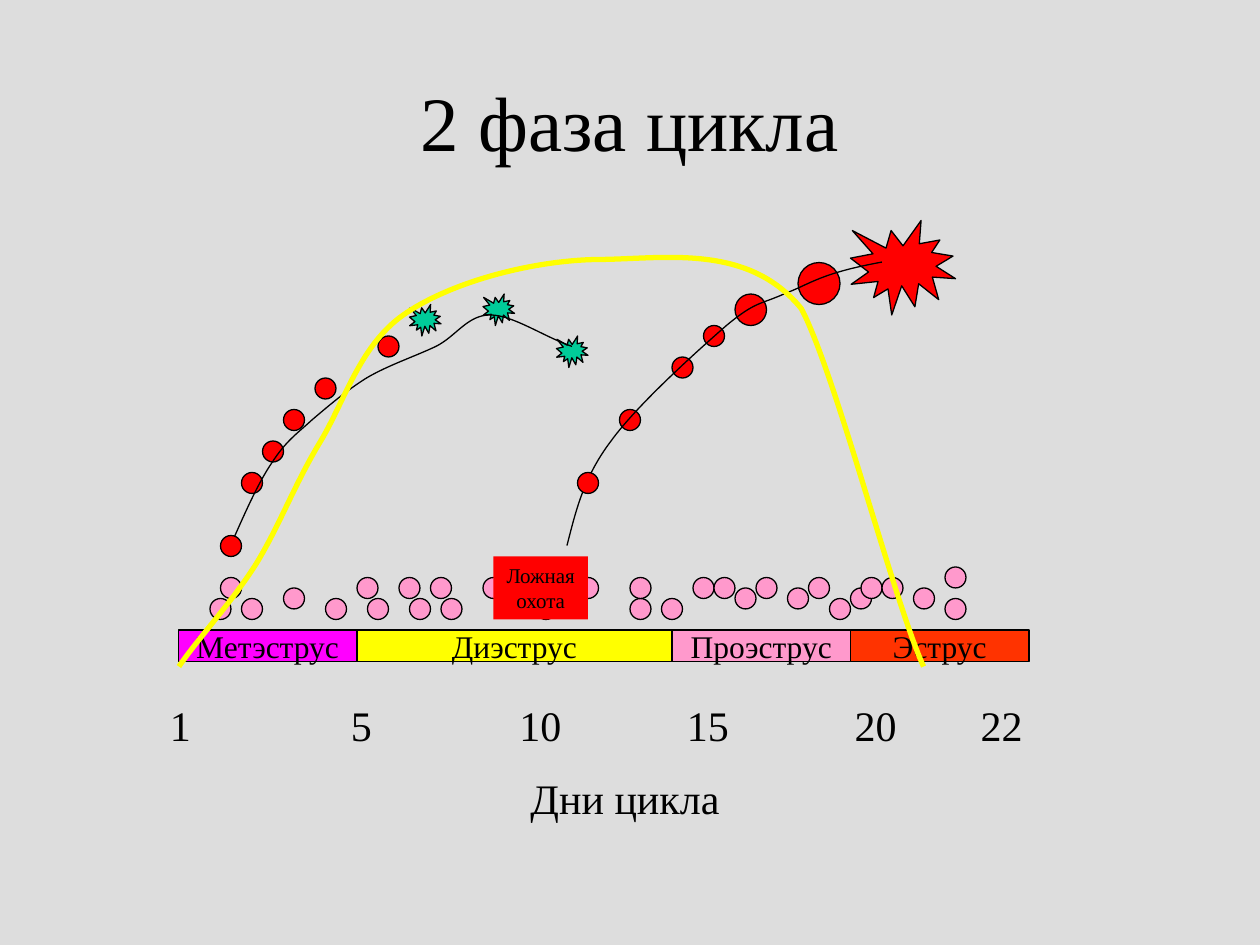
"""Build a slide on the second phase of the cycle, laid on a grid of 1/12 inch."""
from lxml import etree
from pptx import Presentation
from pptx import util as u
from pptx.dml.color import RGBColor
from pptx.enum import shapes, text
from pptx.oxml.ns import qn

UNIT = u.Inches(1 / 12)
FONT = "Times New Roman"
KIND = shapes.MSO_SHAPE
PINK, RED, GREEN, BLACK = "FF99CC", "FF0000", "00CC99", "000000"
TITLE = "2 фаза цикла"
BANDS = [("Метэструс", 17, "FF00FF"), ("Диэструс", 30, "FFFF00"),
         ("Проэструс", 17, PINK), ("Эструс", 17, "FF3300")]
DAYS = [("5", 1.85), ("10", 3.27), ("15", 4.6), ("20", 5.93), ("22", 6.93)]
AXIS = "Дни цикла"
FALSE = ["Ложная", "охота"]
SMALL = {57: [20, 23, 31, 35, 39, 42, 51, 60, 63, 79, 90],
         56: [27, 70, 75, 81, 87],
         55: [21, 34, 38, 41, 46, 55, 60, 66, 68, 72, 77, 82, 84],
         54: [90]}
GROW = [(23, 45, 2), (25, 42, 2), (27, 39, 2), (30, 36, 2), (36, 32, 2),
        (59, 39, 2), (64, 34, 2), (67, 31, 2), (70, 28, 3), (76, 25, 4)]
FIRST = [(21, 51, 2), (55, 45, 2)]
STARS = [(39, 29, 3, 3, GREEN), (46, 28, 3, 3, GREEN),
         (53, 32, 3, 3, GREEN), (81, 21, 10, 9, RED)]
WAVES = [
    [(1.83, 4.33), (1.94, 4.08), (2.05, 3.83), (2.16, 3.67),
     (2.27, 3.5), (2.36, 3.44), (2.48, 3.33), (2.61, 3.22), (2.75, 3.1), (2.91, 3),
     (3.08, 2.9), (3.29, 2.83), (3.46, 2.75), (3.62, 2.67), (3.71, 2.5), (3.89, 2.5),
     (4.07, 2.5), (4.31, 2.67), (4.54, 2.75)],
    [(4.5, 4.33), (4.57, 4.06), (4.63, 3.79), (4.85, 3.5),
     (5.06, 3.21), (5.54, 2.78), (5.77, 2.58), (6, 2.39), (6.03, 2.42), (6.23, 2.33),
     (6.44, 2.25), (6.51, 2.17), (7, 2.08)]]
LEVEL = [(1.42, 5.29), (1.57, 5.07), (1.84, 4.78), (2.03, 4.48),
         (2.21, 4.19), (2.34, 3.84), (2.54, 3.51), (2.74, 3.18), (2.86, 2.72), (3.23, 2.48),
         (3.59, 2.24), (4.21, 2.07), (4.73, 2.06), (5.25, 2.06), (5.93, 1.92), (6.36, 2.45),
         (6.63, 2.96), (7.1, 4.79), (7.33, 5.29)]


def rgb(code):
    return RGBColor.from_string(code)


def write(para, words, size, align=text.PP_ALIGN.CENTER):
    para.alignment = align
    run = para.add_run()
    run.text = words
    run.font.size, run.font.name = u.Pt(size), FONT
    run.font.color.rgb = rgb(BLACK)


def shape(kind, left, top, wide, high, fill, line=True):
    item = slide.shapes.add_shape(kind, *(int(n * UNIT) for n in (left, top, wide, high)))
    item.shadow.inherit = False
    item.fill.solid()
    item.fill.fore_color.rgb = rgb(fill)
    if line:
        item.line.color.rgb, item.line.width = rgb(BLACK), u.Pt(0.75)
    else:
        item.line.fill.background()
    return item


def dots(spots, fill):
    for left, top, size in spots:
        shape(KIND.OVAL, left, top, size, size, fill)


def curve(spots, color, width):
    spots = [(u.Inches(x), u.Inches(y)) for x, y in spots]
    form = slide.shapes.build_freeform(*spots[0])
    form.add_line_segments(spots[1:], close=False)
    item = form.convert_to_shape()
    item.shadow.inherit = False
    item.fill.background()
    item.line.color.rgb, item.line.width = rgb(color), u.Pt(width)
    steps = list(item.element.iter(qn("a:lnTo")))
    for i in range(0, len(steps), 3):
        bend = etree.Element(qn("a:cubicBezTo"))
        steps[i].addprevious(bend)
        for step in steps[i:i + 3]:
            bend.append(step[0])
            step.getparent().remove(step)


def box(left, top, wide, high):
    frame = slide.shapes.add_textbox(*map(u.Inches, (left, top, wide, high))).text_frame
    frame.word_wrap = True
    return frame


deck = Presentation()
deck.slide_width, deck.slide_height = u.Inches(10), u.Inches(7.5)
slide = deck.slides.add_slide(deck.slide_layouts[5])
slide.background.fill.solid()
slide.background.fill.fore_color.rgb = rgb("DDDDDD")

title = slide.shapes.title
title.left, title.top, title.width, title.height = map(u.Inches, (0.75, 0.33, 8.5, 1.25))
title.text_frame.vertical_anchor = text.MSO_ANCHOR.MIDDLE
write(title.text_frame.paragraphs[0], TITLE, 44)

left = 17
for name, wide, fill in BANDS:
    frame = shape(KIND.RECTANGLE, left, 60, wide, 3, fill).text_frame
    frame.word_wrap = False
    write(frame.paragraphs[0], name, 18)
    left += wide

frame = box(0.92, 5.5, 8.08, 1.11)
days = frame.paragraphs[0]
write(days, "".join("\t" + day for day, _ in DAYS), 24, text.PP_ALIGN.LEFT)
tabs = etree.SubElement(days._p.get_or_add_pPr(), qn("a:tabLst"))
for _, stop in DAYS:
    etree.SubElement(tabs, qn("a:tab"), pos=str(u.Inches(stop)), algn="ctr")
axis = frame.add_paragraph()
axis.space_before = u.Pt(13)
write(axis, AXIS, 24)

dots([(x, y, 2) for y, row in SMALL.items() for x in row], PINK)
dots(GROW, RED)
for star in STARS:
    shape(KIND.EXPLOSION1, *star)
for wave in WAVES:
    curve(wave, BLACK, 0.75)
dots(FIRST, RED)

frame = shape(KIND.RECTANGLE, 47, 53, 9, 6, RED, line=False).text_frame
frame.word_wrap = True
frame.vertical_anchor = text.MSO_ANCHOR.TOP
para = frame.paragraphs[0]
write(para, FALSE[0], 12)
para.add_line_break()
write(para, FALSE[1], 12)

write(box(1.25, 5.5, 0.5, 0.5).paragraphs[0], "1", 24, text.PP_ALIGN.LEFT)
curve(LEVEL, "FFFF00", 3)
deck.save("out.pptx")
